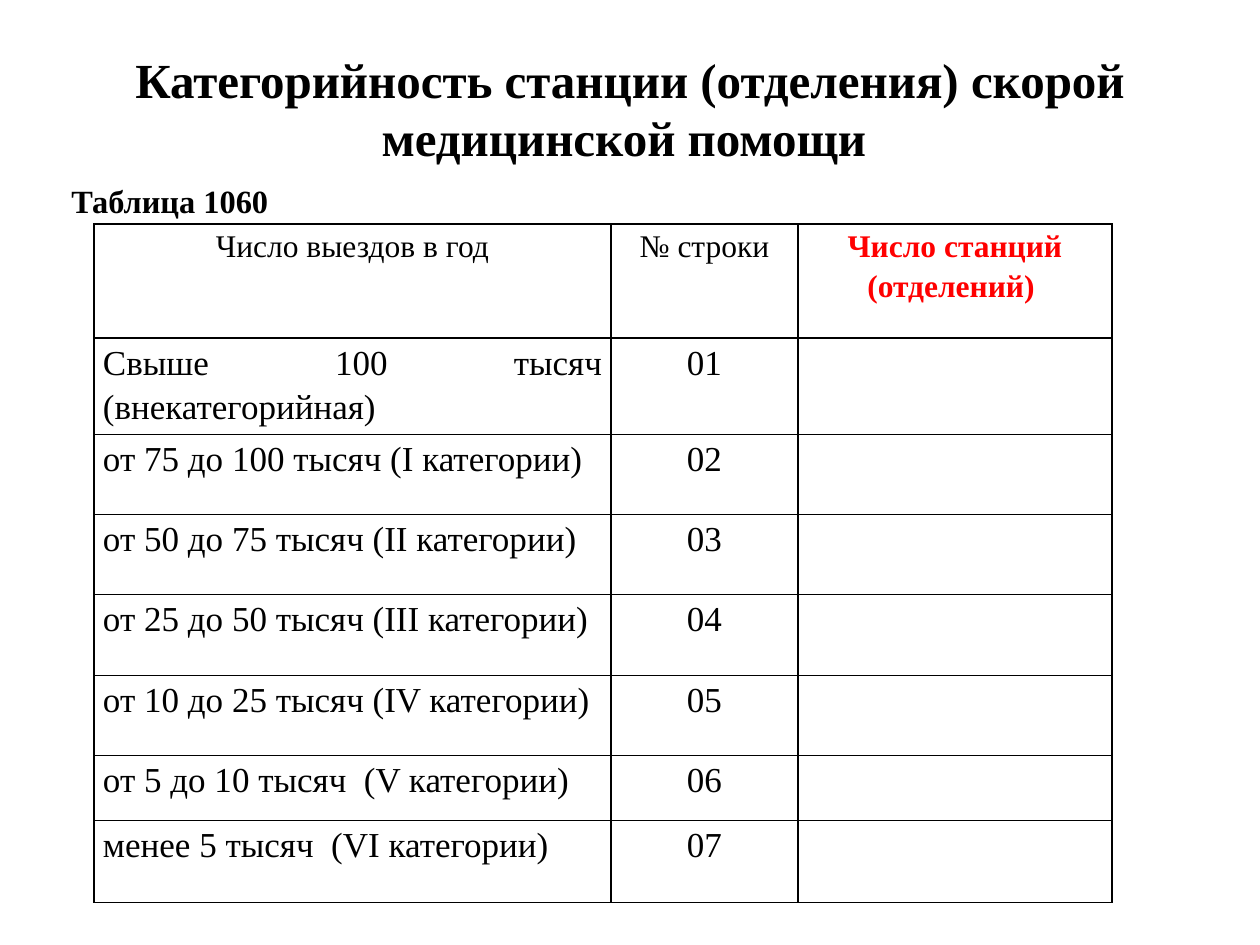
from lxml.etree import SubElement
from pptx import Presentation
from pptx.dml.color import RGBColor
from pptx.enum.text import MSO_ANCHOR, PP_ALIGN
from pptx.oxml.ns import qn
from pptx.util import Emu, Pt

FONT = "Times New Roman"
COLORS = {"text": "000000", "accent": "FF0000"}
WIDTHS = [517, 187, 314]
HEIGHTS = [114, 90, 80, 80, 81, 80, 65, 82]
HEADS = ["Число выездов в год", "№ строки", "Число станций (отделений) "]
TRIPS = [
    "Свыше 100 тысяч (внекатегорийная)",
    "от 75 до 100 тысяч (I категории)",
    "от 50 до 75 тысяч (II категории)",
    "от 25 до 50 тысяч (III категории)",
    "от 10 до 25 тысяч (IV категории)",
    "от 5 до 10 тысяч  (V категории)",
    "менее 5 тысяч  (VI категории) ",
]


def px(count):
    return Emu(round(count * 914400 / 126))


def style(para, size, align, bold=False, color="text"):
    para.alignment = align
    for run in para.runs:
        font = run.font
        font.name, font.size, font.bold = FONT, Pt(size), bold
        font.color.rgb = RGBColor.from_string(COLORS[color])


def add_label(slide, box, text, size, align, anchor):
    frame = slide.shapes.add_textbox(*map(px, box)).text_frame
    frame.word_wrap = True
    frame.vertical_anchor = anchor
    frame.text = text
    style(frame.paragraphs[0], size, align, bold=True)


def add_borders(cell):
    """Draw thin lines on all four sides; they must precede the fill in the XML."""
    props = cell._tc.get_or_add_tcPr()
    for index, side in enumerate(("lnL", "lnR", "lnT", "lnB")):
        line = SubElement(props, qn(f"a:{side}"), w=str(Pt(1)))
        fill = SubElement(line, qn("a:solidFill"))
        SubElement(fill, qn("a:srgbClr"), val=COLORS["text"])
        props.insert(index, line)


def fill_cell(cell, text, size, align, **look):
    cell.margin_left = cell.margin_right = px(9)
    cell.margin_top = cell.margin_bottom = 0
    cell.fill.background()
    add_borders(cell)
    if text:
        cell.text_frame.text = text
        para = cell.text_frame.paragraphs[0]
        para.line_spacing = 1.15
        style(para, size, align, **look)


def add_grid(slide, left, top):
    box = map(px, (left, top, sum(WIDTHS), sum(HEIGHTS)))
    table = slide.shapes.add_table(len(HEIGHTS), len(WIDTHS), *box).table
    table.first_row = table.horz_banding = False
    for column, width in zip(table.columns, WIDTHS):
        column.width = px(width)
    for row, height in zip(table.rows, HEIGHTS):
        row.height = px(height)

    looks = [{}, {}, {"bold": True, "color": "accent"}]
    for col, (head, look) in enumerate(zip(HEADS, looks)):
        fill_cell(table.cell(0, col), head, 18, PP_ALIGN.CENTER, **look)
    aligns = [PP_ALIGN.JUSTIFY, PP_ALIGN.CENTER, PP_ALIGN.CENTER]
    for row, trip in enumerate(TRIPS, 1):
        for col, text in enumerate((trip, f"{row:02}", "")):
            fill_cell(table.cell(row, col), text, 20, aligns[col])


def main():
    deck = Presentation()
    deck.slide_width, deck.slide_height = px(1260), px(945)
    slide = deck.slides.add_slide(deck.slide_layouts[6])
    add_label(slide, (63, 38, 1134, 140),
              "Категорийность станции (отделения) скорой медицинской помощи ",
              28, PP_ALIGN.CENTER, MSO_ANCHOR.MIDDLE)
    add_label(slide, (59, 178, 557, 48), "Таблица 1060",
              18.5, PP_ALIGN.LEFT, MSO_ANCHOR.BOTTOM)
    add_grid(slide, 94, 224)
    deck.save("out.pptx")


if __name__ == "__main__":
    main()
